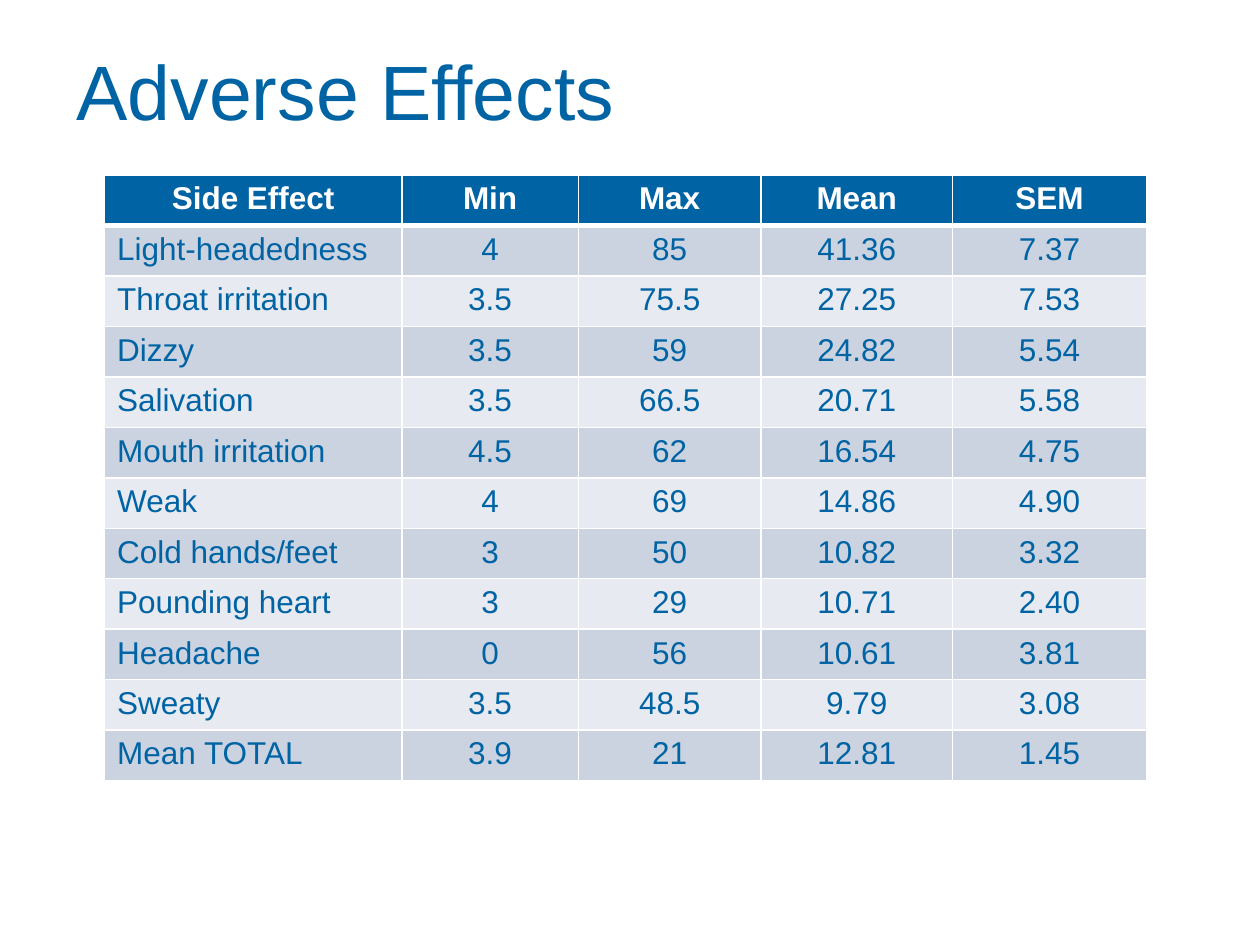
from lxml import etree
from pptx import Presentation
from pptx.dml.color import RGBColor
from pptx.enum import text
from pptx.oxml.ns import qn
from pptx.util import Inches, Pt

theme = {
    "font": "Arial",
    "blue": "0063A4",
    "white": "FFFFFF",
    "bands": ["E7EAF0", "CCD3E0"],
    "title": 44,
    "body": 18,
    "line": 1,
    "rule": 3,
}

heads = ["Side Effect", "Min", "Max", "Mean", "SEM"]
effects = [
    ["Light-headedness", "4", "85", "41.36", "7.37"],
    ["Throat irritation", "3.5", "75.5", "27.25", "7.53"],
    ["Dizzy", "3.5", "59", "24.82", "5.54"],
    ["Salivation", "3.5", "66.5", "20.71", "5.58"],
    ["Mouth irritation", "4.5", "62", "16.54", "4.75"],
    ["Weak", "4", "69", "14.86", "4.90"],
    ["Cold hands/feet", "3", "50", "10.82", "3.32"],
    ["Pounding heart", "3", "29", "10.71", "2.40"],
    ["Headache", "0", "56", "10.61", "3.81"],
    ["Sweaty", "3.5", "48.5", "9.79", "3.08"],
    ["Mean TOTAL", "3.9", "21", "12.81", "1.45"],
]
rows = [heads] + effects


def write(para, words, size, color, bold=False):
    run = para.add_run()
    run.text = words
    run.font.name = theme["font"]
    run.font.size = Pt(size)
    run.font.bold = bold
    run.font.color.rgb = RGBColor.from_string(color)


def edge(cell, side, index, width):
    line = etree.Element(qn("a:ln" + side), w=str(Pt(width)))
    fill = etree.SubElement(line, qn("a:solidFill"))
    etree.SubElement(fill, qn("a:srgbClr"), val=theme["white"])
    cell._tc.get_or_add_tcPr().insert(index, line)


deck = Presentation()
deck.slide_width, deck.slide_height = Inches(10), Inches(7.5)
wide, high = deck.slide_width / 100, deck.slide_height / 100
slide = deck.slides.add_slide(deck.slide_layouts[6])

title = slide.shapes.add_textbox(
    int(5.1 * wide), int(2.8 * high), int(90 * wide), int(13.47 * high)
)
frame = title.text_frame
frame.word_wrap = True
frame.vertical_anchor = text.MSO_ANCHOR.MIDDLE
write(frame.paragraphs[0], "Adverse Effects", theme["title"], theme["blue"])

spans = [23.6, 14, 14.5, 15.2, 15.4]
step = 5.07
table = slide.shapes.add_table(
    len(rows), len(heads),
    int(8.3 * wide), int(18.53 * high),
    int(sum(spans) * wide), int(len(rows) * step * high),
).table
for col, span in zip(table.columns, spans):
    col.width = int(span * wide)

for r, row in enumerate(rows):
    head = r == 0
    back = theme["blue"] if head else theme["bands"][r % 2]
    ink = theme["white"] if head else theme["blue"]
    for c, words in enumerate(row):
        cell = table.cell(r, c)
        cell.fill.solid()
        cell.fill.fore_color.rgb = RGBColor.from_string(back)
        para = cell.text_frame.paragraphs[0]
        if head or c > 0:
            para.alignment = text.PP_ALIGN.CENTER
        write(para, words, theme["body"], ink, head)
        for i, side in enumerate("LRTB"):
            thick = (r, side) in [(0, "B"), (1, "T")]
            edge(cell, side, i, theme["rule" if thick else "line"])

deck.save("out.pptx")
